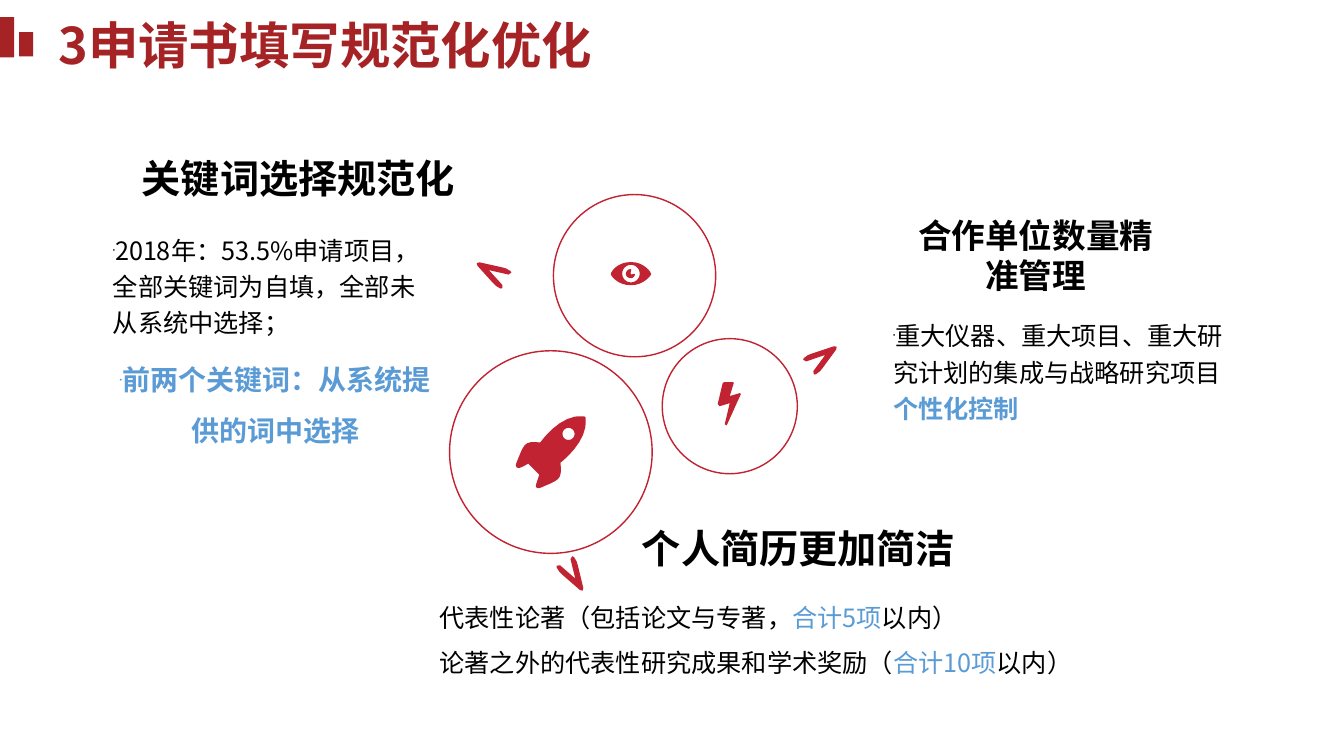
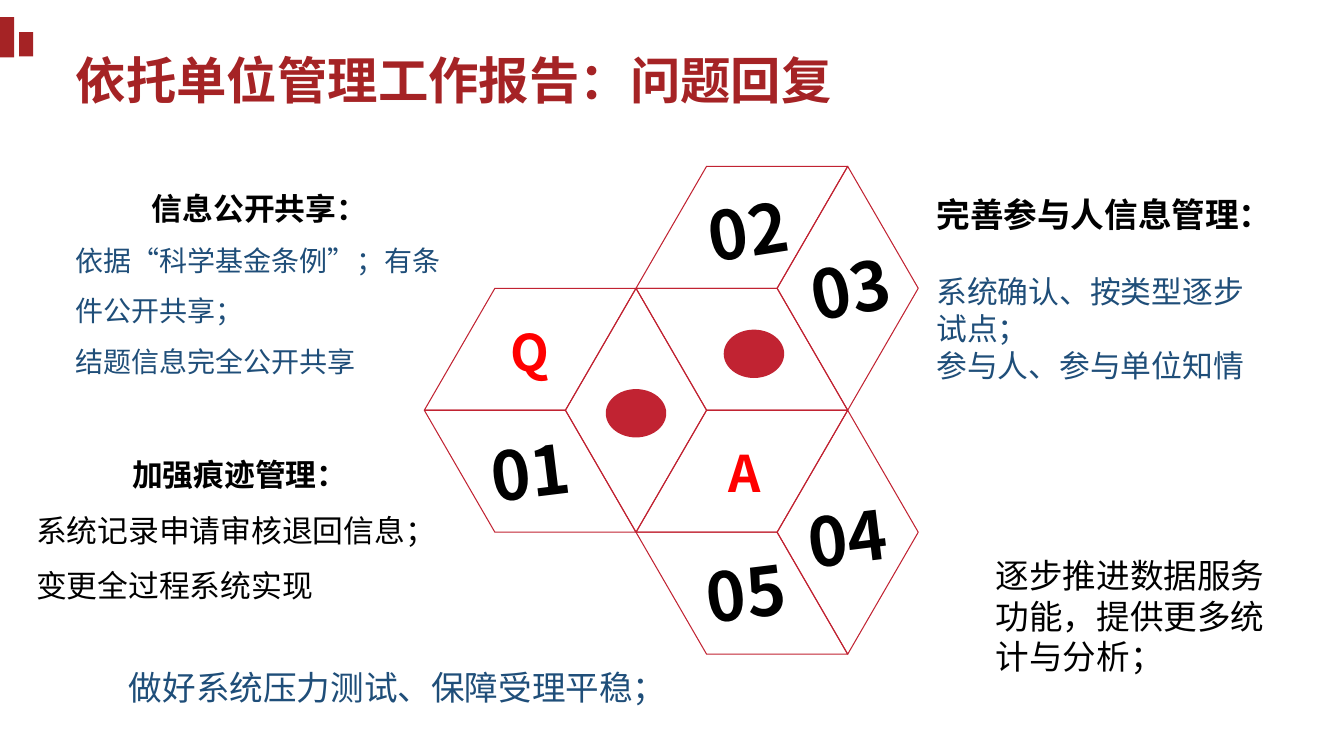
import math
from lxml import etree
from pptx import Presentation, util as u
from pptx.dml.color import RGBColor
from pptx.enum import shapes, text
from pptx.oxml import ns

RED = RGBColor(0xC1, 0x23, 0x32)
TITLE_RED = RGBColor(0xA5, 0x23, 0x25)
BRIGHT_RED = RGBColor(0xFF, 0x00, 0x00)
BLACK = RGBColor(0x00, 0x00, 0x00)
SKY = RGBColor(0x5B, 0x9B, 0xD5)
NAVY = RGBColor(0x1F, 0x4E, 0x79)
CENTER = text.PP_ALIGN.CENTER

ROCKET = [
    (55.6, 45.9), (55.6, 45.9, 58.4, 43.8, 58.1, 41.5),
    (58.1, 41.4, 58, 41.3, 57.9, 41.3), (55.6, 41, 53.6, 43.9, 53.6, 43.9),
    (51.9, 43.7, 52, 44.1, 51.2, 46), (51.1, 46.3, 51.3, 46.5, 51.6, 46.4),
    (51.9, 46.3, 52.4, 46, 52.4, 46), (53.5, 47.1),
    (53.5, 47.1, 53.3, 47.7, 53.2, 48), (53.1, 48.3, 53.2, 48.5, 53.6, 48.4),
    (55.4, 47.6, 55.8, 47.7, 55.6, 45.9),
]
EYE = [
    (62.6, 26), (61.2, 26, 60.6, 27, 60.6, 27.2),
    (60.6, 27.3, 61.2, 28.3, 62.6, 28.3),
    (63.9, 28.3, 64.6, 27.3, 64.6, 27.2), (64.6, 27, 63.9, 26, 62.6, 26),
]
PUPIL = [
    (62.6, 27.2), (62.5, 27.1, 62.7, 26.7, 62.6, 26.7),
    (62.3, 26.7, 62.1, 26.9, 62.1, 27.2), (62.1, 27.4, 62.3, 27.6, 62.6, 27.6),
    (62.8, 27.6, 63, 27.4, 63, 27.2), (63, 27.1, 62.6, 27.3, 62.6, 27.2),
]
BOLT = [
    (73.5, 39.1), (72.1, 42.2), (71.9, 42.1), (72.4, 40), (71.4, 40.3),
    (71.2, 40.1), (71.7, 38), (71.9, 37.9), (72.7, 37.9), (72.8, 38),
    (72.4, 39.3), (73.4, 39),
]
ARROW_EDGE = [(-0.2, 0.2), (-2.4, 0.9), (-2.8, 1), (-3.3, 1), (-3.45, 0.9), (-3.3, 0.6)]
ARROW = [(0, 0), *ARROW_EDGE, (-1.4, 0), *[(x, -y) for x, y in reversed(ARROW_EDGE)]]

CUBE_FACES = [
    [(1, 0), (0, 1), (2, 1), (3, 0)],
    [(0, 1), (1, 2), (3, 2), (2, 1)],
    [(3, 0), (2, 1), (3, 2), (4, 1)],
]


def ring(x, y, radius, steps=32):
    angles = [math.tau * step / steps for step in range(steps)]
    return [(x + radius * math.cos(a), y + radius * math.sin(a)) for a in angles]


def flatten(contour, steps=8):
    points = []
    for node in contour:
        if len(node) == 2:
            points.append(node)
            continue
        knots = [points[-1], node[:2], node[2:4], node[4:]]
        for step in range(1, steps + 1):
            t = step / steps
            weights = ((1 - t) ** 3, 3 * t * (1 - t) ** 2, 3 * t * t * (1 - t), t ** 3)
            points.append(tuple(sum(w * k[axis] for w, k in zip(weights, knots)) for axis in (0, 1)))
    return points


def para(*spans, **layout):
    return spans, layout


def span(words, size, color=BLACK, bold=False):
    return words, size, color, bold


class Deck:
    FONT = "Noto Sans CJK SC"
    CELL = u.Inches(0.1)
    LAYOUT = 3

    def __init__(self):
        self.deck = Presentation()
        self.deck.slide_width, self.deck.slide_height = self.grid(133.33, 75)
        self.page = None

    def grid(self, *cells):
        return [u.Emu(round(cell * self.CELL)) for cell in cells]

    def add_page(self, title, at):
        self.page = self.deck.slides.add_slide(self.deck.slide_layouts[self.LAYOUT])
        self.fill_box(self.page.shapes.title, at, [para(span(title, 36, TITLE_RED, True))])
        for bar in [(0, 1.7, 1.4, 4), (1.9, 3.2, 1.4, 2.4)]:
            self.preset(shapes.MSO_SHAPE.RECTANGLE, bar, fill=TITLE_RED)

    def style(self, shape, fill=None, line=None, width=1):
        shape.shadow.inherit = False
        if fill is None:
            shape.fill.background()
        else:
            shape.fill.solid()
            shape.fill.fore_color.rgb = fill
        if line is None:
            shape.line.fill.background()
        else:
            shape.line.color.rgb = line
            shape.line.width = u.Pt(width)

    def preset(self, kind, at, **look):
        self.style(self.page.shapes.add_shape(kind, *self.grid(*at)), **look)

    def outline(self, *contours, **look):
        paths = [[self.grid(*point) for point in flatten(contour)] for contour in contours]
        builder = self.page.shapes.build_freeform(*paths[0][0], scale=1.0)
        for index, points in enumerate(paths):
            if index:
                builder.move_to(*points[0])
            builder.add_line_segments(points[1:], close=True)
        self.style(builder.convert_to_shape(), **look)

    def arrow(self, x, y, degrees):
        cos, sin = math.cos(math.radians(degrees)), math.sin(math.radians(degrees))
        self.outline([(x + a * cos - b * sin, y + a * sin + b * cos) for a, b in ARROW], fill=RED)

    def body(self, index, at, paras, **frame):
        self.fill_box(self.page.placeholders[index], at, paras, **frame)

    def label(self, at, paras, turn=0, **frame):
        box = self.page.shapes.add_textbox(*self.grid(*at))
        box.rotation = turn
        self.fill_box(box, at, paras, **frame)

    def fill_box(self, box, at, paras, flush=False, anchor=text.MSO_ANCHOR.TOP):
        box.left, box.top, box.width, box.height = self.grid(*at)
        frame = box.text_frame
        frame.word_wrap = True
        frame.auto_size = text.MSO_AUTO_SIZE.NONE
        frame.vertical_anchor = anchor
        if flush:
            frame.margin_left = frame.margin_top = frame.margin_right = frame.margin_bottom = 0
        for index, (spans, layout) in enumerate(paras):
            target = frame.add_paragraph() if index else frame.paragraphs[0]
            self.arrange(target, **layout)
            for item in spans:
                self.add_span(target, *item)

    def arrange(self, target, align=text.PP_ALIGN.LEFT, spacing=1.0, before=0, after=0, bullet=False):
        target.alignment = align
        target.line_spacing = spacing
        target.space_before, target.space_after = u.Pt(before), u.Pt(after)
        properties = target._p.get_or_add_pPr()
        properties.set("marL", "0")
        properties.set("indent", "0")
        if bullet:
            etree.SubElement(properties, ns.qn("a:buSzPct")).set("val", "25000")
            etree.SubElement(properties, ns.qn("a:buChar")).set("char", "•")
        else:
            etree.SubElement(properties, ns.qn("a:buNone"))

    def add_span(self, target, words, size, color, bold):
        run = target.add_run()
        run.text = words
        font = run.font
        font.size, font.bold, font.name = u.Pt(size), bold, self.FONT
        font.color.rgb = color
        etree.SubElement(run._r.get_or_add_rPr(), ns.qn("a:ea")).set("typeface", self.FONT)


def add_application_page(deck):
    deck.add_page("3申请书填写规范化优化", (4.8, 0.9, 63, 7.1))
    for left, top, size in [(65.7, 33.6, 13.4), (44.6, 34.8, 20.1), (54.9, 19.3, 16.1)]:
        deck.preset(shapes.MSO_SHAPE.OVAL, (left, top, size, size), line=RED)
    deck.outline(BOLT, fill=RED)
    deck.outline(ROCKET, ring(56.4, 43.05, 0.6), fill=RED)
    deck.outline(EYE, ring(62.6, 27.15, 0.87), PUPIL, fill=RED)
    for tip in [(47.3, 26.1, 210.2), (83, 34.4, 323.9), (57.8, 58.6, 58.7)]:
        deck.arrow(*tip)
    for at, words, size, align in [
        ((11.7, 14.8, 35.8, 5.7), "关键词选择规范化", 28, CENTER),
        ((62.7, 51.5, 39.1, 5.7), "个人简历更加简洁", 28, text.PP_ALIGN.LEFT),
        ((88.5, 20.8, 28.5, 9.1), "合作单位数量精准管理", 24, CENTER),
    ]:
        deck.label(at, [para(span(words, size, bold=True), align=align)])
    deck.body(1, (11.2, 22.7, 32.2, 22.1), [
        para(span("2018年：53.5%申请项目，全部关键词为自填，全部未从系统中选择；", 18),
             spacing=1.2, after=6, bullet=True),
        para(span("前两个关键词：从系统提供的词中选择", 20, SKY, True),
             align=CENTER, spacing=1.5, after=6, bullet=True),
    ], flush=True)
    deck.body(2, (88.6, 31.2, 34.6, 12.5), [
        para(span("重大仪器、重大项目、重大研究计划的集成与战略研究项目", 18),
             span("个性化控制", 18, SKY, True), spacing=1.2, after=6, bullet=True),
    ], flush=True)
    deck.label((43.6, 59.2, 66.8, 9.9), [
        para(span(lead, 18), span(limit, 18, SKY), span("以内）", 18), spacing=1.2, after=6)
        for lead, limit in [
            ("代表性论著（包括论文与专著，", "合计5项"),
            ("论著之外的代表性研究成果和学术奖励（", "合计10项"),
        ]
    ], flush=True)


def add_report_page(deck):
    deck.add_page("依托单位管理工作报告：问题回复", (6.5, 4.4, 85.4, 7.1))
    column, row = 7, 12.1
    for across, down in [(0, 1), (3, 2), (3, 0)]:
        for face in CUBE_FACES:
            deck.outline([(42.1 + column * (across + x), 16.5 + row * (down + y)) for x, y in face],
                         line=RED, width=0.75)
    for left, top in [(71.8, 32.7), (60.1, 38.6)]:
        deck.preset(shapes.MSO_SHAPE.OVAL, (left, top, 6, 4.8), fill=RED)
    for number, left, top, turn in [
        ("01", 48.4, 42.7, 353), ("02", 70, 18.8, 351.2), ("03", 80.2, 24.5, 349.1),
        ("04", 79.9, 49.2, 353), ("05", 69.8, 54.7, 353),
    ]:
        deck.label((left, top, 8.4, 8.1), [para(span(number, 48, bold=True), align=CENTER)],
                   turn=turn, flush=True, anchor=text.MSO_ANCHOR.MIDDLE)
    for letter, left, top in [("Q", 49.7, 31.4), ("A", 71.3, 43.4)]:
        deck.label((left, top, 5.7, 7.1), [para(span(letter, 36, BRIGHT_RED, True))])
    deck.body(1, (6.5, 16.5, 38.5, 21.7), [
        para(span("信息公开共享：", 22, bold=True), align=CENTER, spacing=1.5),
        para(span("依据“科学基金条例”；有条件公开共享；", 20, NAVY), spacing=1.5),
        para(span("结题信息完全公开共享", 20, NAVY), spacing=1.5),
    ])
    deck.body(2, (91.9, 18.7, 34.6, 20.2), [
        para(span("完善参与人信息管理：", 24, bold=True)),
        para(span("系统确认、按类型逐步试点；", 22, NAVY), before=28),
        para(span("参与人、参与单位知情", 22, NAVY)),
    ])
    deck.label((2.6, 42.9, 42.4, 17.7), [
        para(span("加强痕迹管理：", 22, bold=True), align=CENTER, spacing=1.5),
        para(span("系统记录申请审核退回信息；", 22), spacing=1.5),
        para(span("变更全过程系统实现", 22), spacing=1.5),
    ])
    deck.label((97.8, 54.6, 31.9, 13.1), [para(span("逐步推进数据服务功能，提供更多统计与分析；", 24))])
    deck.label((11.8, 65.7, 54.3, 5), [para(span("做好系统压力测试、保障受理平稳；", 24, NAVY))])


def main():
    deck = Deck()
    add_application_page(deck)
    add_report_page(deck)
    deck.deck.save("out.pptx")


if __name__ == "__main__":
    main()
